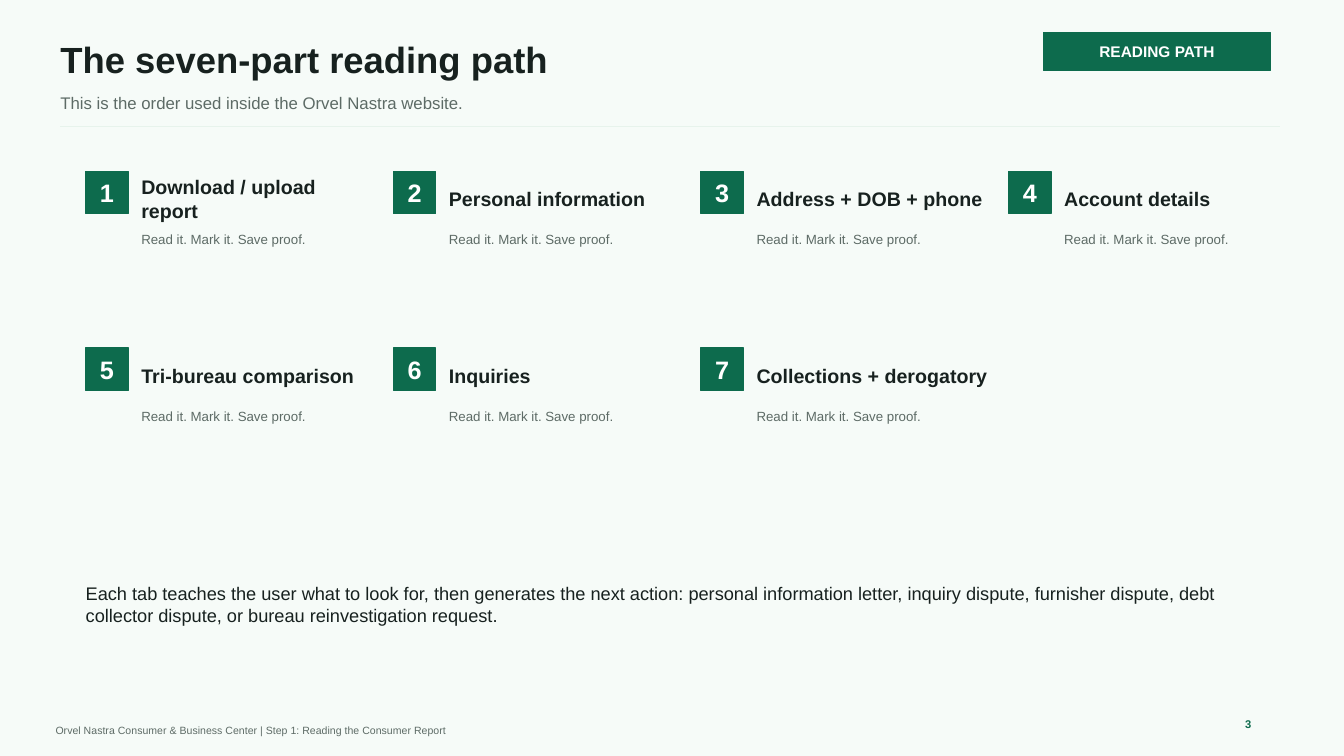
from dataclasses import dataclass

from pptx import Presentation
from pptx.dml.color import RGBColor
from pptx.enum.shapes import MSO_CONNECTOR as Connector, MSO_SHAPE as ShapeKind
from pptx.enum.text import MSO_ANCHOR as Anchor, MSO_AUTO_SIZE as AutoSize, PP_ALIGN as Align
from pptx.oxml.ns import qn
from pptx.shapes.autoshape import Shape
from pptx.slide import Slide
from pptx.util import Cm, Pt
from lxml.etree import SubElement

COLOURS = {
    "background": "F6FBF8",
    "green": "0D6B4D",
    "ink": "17211F",
    "muted": "5D6B66",
    "rule": "E7F3EC",
    "white": "FFFFFF",
}
FONT = "Arial"
COLUMNS = 4
GRID_LEFT, GRID_TOP = 2.16, 4.32
COLUMN_PITCH, ROW_PITCH = 7.75, 4.45
NUMBER_SIZE = 1.07
TEXT_INDENT = 1.4
STEP_WIDTH = 5.84
STEP_NOTE = "Read it. Mark it. Save proof."
STEPS = [
    "Download / upload report",
    "Personal information",
    "Address + DOB + phone",
    "Account details",
    "Tri-bureau comparison",
    "Inquiries",
    "Collections + derogatory",
]


@dataclass(frozen=True)
class Box:
    left: float
    top: float
    width: float
    height: float


@dataclass(frozen=True)
class TextStyle:
    size: float
    colour: str
    bold: bool = False
    align: Align = Align.LEFT


@dataclass(frozen=True)
class Label:
    text: str
    box: Box
    style: TextStyle


TITLE = TextStyle(26, "ink", True)
SUBTITLE = TextStyle(12, "muted")
TAG = TextStyle(11, "white", True, Align.CENTER)
NUMBER = TextStyle(18, "white", True, Align.CENTER)
HEADING = TextStyle(14, "ink", True)
NOTE = TextStyle(9.5, "muted")
SUMMARY = TextStyle(13, "ink")
FOOTER = TextStyle(7.5, "muted")
PAGE = TextStyle(8, "green", True)

LABELS = [
    Label("This is the order used inside the Orvel Nastra website.",
          Box(1.52, 2.24, 26.67, 0.71), SUBTITLE),
    Label("Each tab teaches the user what to look for, then generates the next action: "
          "personal information letter, inquiry dispute, furnisher dispute, debt collector "
          "dispute, or bureau reinvestigation request.",
          Box(GRID_LEFT, 14.53, 28.96, 1.4), SUMMARY),
    Label("Orvel Nastra Consumer & Business Center | Step 1: Reading the Consumer Report",
          Box(1.4, 18.16, 24.13, 0.51), FOOTER),
    Label("3", Box(31.37, 17.98, 1.02, 0.51), PAGE),
]


def colour(name: str) -> RGBColor:
    return RGBColor.from_string(COLOURS[name])


def lengths(box: Box) -> tuple[Cm, Cm, Cm, Cm]:
    return Cm(box.left), Cm(box.top), Cm(box.width), Cm(box.height)


def write(shape: Shape, text: str, style: TextStyle) -> None:
    frame = shape.text_frame
    frame.text = text
    frame.word_wrap = True
    frame.auto_size = AutoSize.NONE
    frame.vertical_anchor = Anchor.MIDDLE
    frame.margin_left = frame.margin_right = frame.margin_top = frame.margin_bottom = 0
    paragraph = frame.paragraphs[0]
    paragraph.alignment = style.align
    paragraph.font.name = FONT
    paragraph.font.size = Pt(style.size)
    paragraph.font.bold = style.bold
    paragraph.font.color.rgb = colour(style.colour)


def add_title(slide: Slide, text: str, box: Box) -> None:
    title = slide.shapes.title
    title.left, title.top, title.width, title.height = lengths(box)
    write(title, text, TITLE)


def add_label(slide: Slide, label: Label) -> None:
    write(slide.shapes.add_textbox(*lengths(label.box)), label.text, label.style)


def add_block(slide: Slide, label: Label) -> None:
    block = slide.shapes.add_shape(ShapeKind.RECTANGLE, *lengths(label.box))
    block.shadow.inherit = False
    block.fill.solid()
    block.fill.fore_color.rgb = colour("green")
    block.line.color.rgb = colour("green")
    block.line.width = Pt(0.75)
    write(block, label.text, label.style)


def add_rule(slide: Slide, left: float, right: float, top: float) -> None:
    rule = slide.shapes.add_connector(Connector.STRAIGHT, Cm(left), Cm(top), Cm(right), Cm(top))
    rule.line.color.rgb = colour("rule")
    rule.line.width = Pt(1)
    SubElement(rule._element.spPr, qn("a:effectLst"))


def add_step(slide: Slide, index: int, heading: str) -> None:
    row, column = divmod(index, COLUMNS)
    left = GRID_LEFT + column * COLUMN_PITCH
    top = GRID_TOP + row * ROW_PITCH
    text_left = left + TEXT_INDENT
    add_block(slide, Label(str(index + 1), Box(left, top, NUMBER_SIZE, NUMBER_SIZE), NUMBER))
    add_label(slide, Label(heading, Box(text_left, top + 0.05, STEP_WIDTH, 1.27), HEADING))
    add_label(slide, Label(STEP_NOTE, Box(text_left, top + 1.4, STEP_WIDTH, 0.64), NOTE))


def main() -> None:
    presentation = Presentation()
    presentation.slide_width, presentation.slide_height = Cm(33.86), Cm(19.05)
    slide = presentation.slides.add_slide(presentation.slide_layouts.get_by_name("Title Only"))
    slide.background.fill.solid()
    slide.background.fill.fore_color.rgb = colour("background")

    add_title(slide, "The seven-part reading path", Box(1.52, 0.91, 22.61, 1.14))
    add_rule(slide, 1.52, 32.26, 3.18)
    add_block(slide, Label("READING PATH", Box(26.29, 0.81, 5.72, 0.97), TAG))
    for index, heading in enumerate(STEPS):
        add_step(slide, index, heading)
    for label in LABELS:
        add_label(slide, label)

    presentation.save("out.pptx")


if __name__ == "__main__":
    main()
